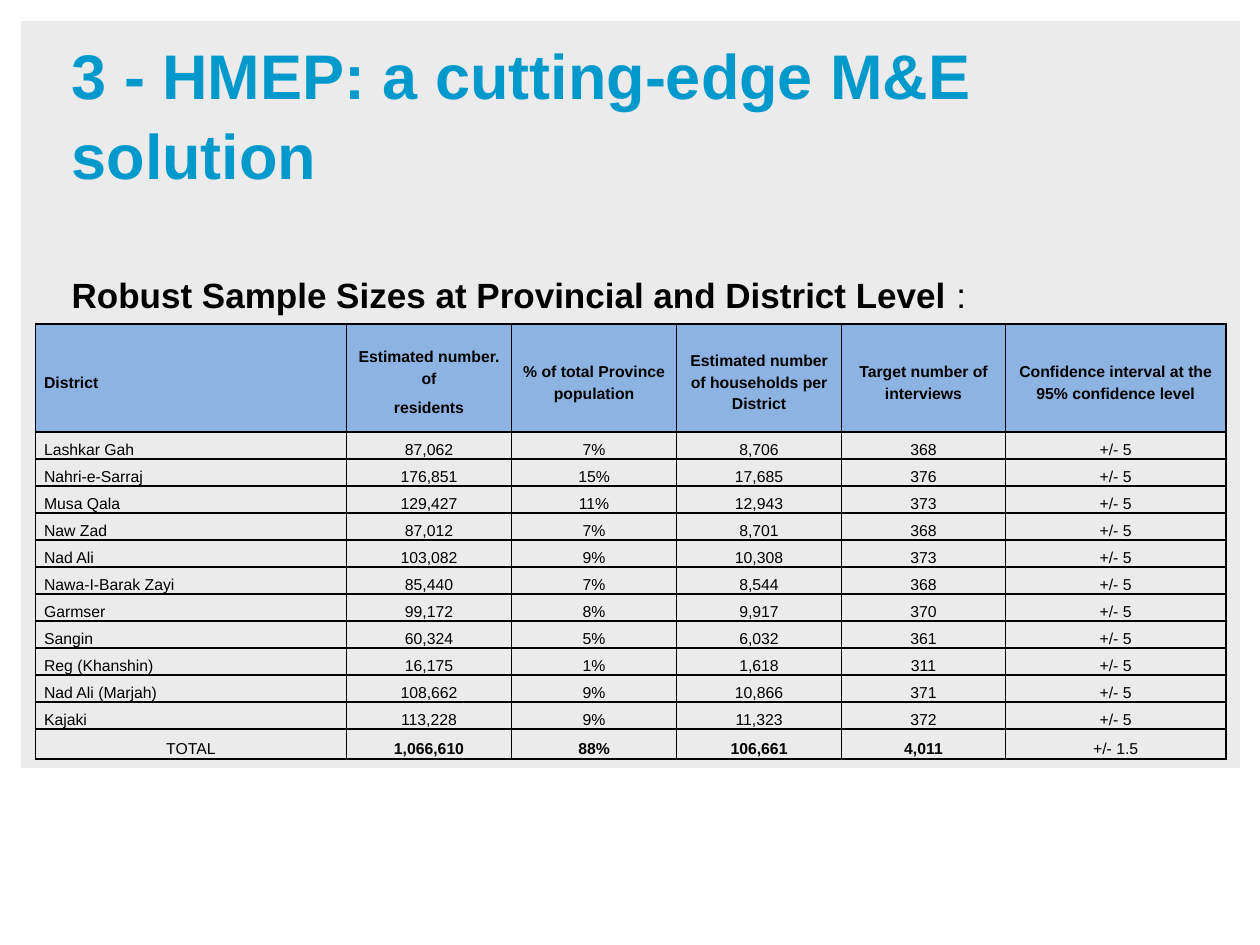
import pptx
import pptx.dml.color
import pptx.enum.shapes
import pptx.enum.text
import pptx.oxml
import pptx.oxml.ns
import pptx.util

Inches = pptx.util.Inches
Pt = pptx.util.Pt
Align = pptx.enum.text.PP_ALIGN
Anchor = pptx.enum.text.MSO_ANCHOR

COLORS = {"panel": "EBEBEB", "title": "0099CC", "text": "000000",
          "header": "8DB3E2", "border": "000000"}

HEADERS = ["District", "Estimated number. of\nresidents",
           "% of total Province population",
           "Estimated number of households per District",
           "Target number of interviews",
           "Confidence interval at the 95% confidence level"]
DISTRICTS = [
    ("Lashkar Gah", "87,062", "7%", "8,706", "368"),
    ("Nahri-e-Sarraj", "176,851", "15%", "17,685", "376"),
    ("Musa Qala", "129,427", "11%", "12,943", "373"),
    ("Naw Zad", "87,012", "7%", "8,701", "368"),
    ("Nad Ali", "103,082", "9%", "10,308", "373"),
    ("Nawa-I-Barak Zayi", "85,440", "7%", "8,544", "368"),
    ("Garmser", "99,172", "8%", "9,917", "370"),
    ("Sangin", "60,324", "5%", "6,032", "361"),
    ("Reg (Khanshin)", "16,175", "1%", "1,618", "311"),
    ("Nad Ali (Marjah)", "108,662", "9%", "10,866", "371"),
    ("Kajaki", "113,228", "9%", "11,323", "372"),
]
TOTAL = ("TOTAL", "1,066,610", "88%", "106,661", "4,011", "+/- 1.5")


class SlideBuilder:
    font = "Arial"
    cell_size = 9
    border_width = 1

    def __init__(self, slide):
        self.slide = slide

    def color(self, name):
        return pptx.dml.color.RGBColor.from_string(COLORS[name])

    def run(self, paragraph, text, size, bold=False, color="text"):
        run = paragraph.add_run()
        run.text = text
        run.font.name = self.font
        run.font.size = Pt(size)
        run.font.bold = bold
        run.font.color.rgb = self.color(color)

    def panel(self, left, top, width, height):
        panel = self.slide.shapes.add_shape(
            pptx.enum.shapes.MSO_SHAPE.RECTANGLE,
            Inches(left), Inches(top), Inches(width), Inches(height))
        panel.shadow.inherit = False
        panel.fill.solid()
        panel.fill.fore_color.rgb = self.color("panel")
        panel.line.color.rgb = self.color("panel")
        panel.line.width = Pt(0.75)

    def text(self, left, top, width, height, runs, size, color="text",
             anchor=Anchor.TOP, spacing=1.0, margin_top=0.05):
        frame = self.slide.shapes.add_textbox(
            Inches(left), Inches(top), Inches(width), Inches(height)).text_frame
        frame.word_wrap = True
        frame.vertical_anchor = anchor
        frame.margin_top = Inches(margin_top)
        paragraph = frame.paragraphs[0]
        paragraph.line_spacing = spacing
        for words, bold in runs:
            self.run(paragraph, words, size, bold, color)

    def cell(self, cell, text, bold, centered, fill=None):
        cell.margin_left = cell.margin_right = Inches(0.07)
        cell.margin_top, cell.margin_bottom = Inches(0.04), 0
        cell.vertical_anchor = Anchor.MIDDLE
        for index, line in enumerate(text.split("\n")):
            frame = cell.text_frame
            paragraph = frame.add_paragraph() if index else frame.paragraphs[0]
            paragraph.alignment = Align.CENTER if centered else Align.LEFT
            paragraph.line_spacing = Pt(12.5)
            if index:
                paragraph.space_before = Pt(3.9)
            self.run(paragraph, line, self.cell_size, bold)
        # Borders come before the fill in the cell properties
        properties = cell._tc.get_or_add_tcPr()
        for side in ("lnL", "lnR", "lnT", "lnB"):
            properties.append(pptx.oxml.parse_xml(
                f'<a:{side} {pptx.oxml.ns.nsdecls("a")} w="{Pt(self.border_width)}">'
                f'<a:solidFill><a:srgbClr val="{COLORS["border"]}"/></a:solidFill>'
                f'</a:{side}>'))
        if fill:
            cell.fill.solid()
            cell.fill.fore_color.rgb = self.color(fill)
        else:
            cell.fill.background()

    def table(self, left, top, widths, heights, rows):
        table = self.slide.shapes.add_table(
            len(rows), len(widths), Inches(left), Inches(top),
            Inches(sum(widths)), Inches(sum(heights))).table
        table.first_row = table.horz_banding = False
        for column, width in zip(table.columns, widths):
            column.width = Inches(width)
        last_row, last_column = len(rows) - 1, len(widths) - 1
        for r, values in enumerate(rows):
            table.rows[r].height = Inches(heights[r])
            for c, value in enumerate(values):
                is_sum = r == last_row and 0 < c < last_column
                self.cell(table.cell(r, c), value, bold=r == 0 or is_sum,
                          centered=c > 0 or r == last_row,
                          fill=None if r else "header")


def main():
    deck = pptx.Presentation()
    deck.slide_width, deck.slide_height = Inches(10), Inches(7.5)
    builder = SlideBuilder(deck.slides.add_slide(deck.slide_layouts[6]))

    # Background panel
    builder.panel(0.17, 0.17, 9.67, 5.92)

    # Title and subtitle
    builder.text(0.47, 0.49, 9, 1.08,
                 [("3 - HMEP: a cutting-edge M&E solution", True)],
                 36, "title", Anchor.BOTTOM, spacing=1.05)
    builder.text(0.47, 2.09, 9, 3.79,
                 [("Robust Sample Sizes at Provincial and District Level ", True),
                  (":", False)], 20, margin_top=0.08)

    # Sample size table: the district rows share the remaining height
    header_height, total_height, table_height = 0.86, 0.24, 3.46
    district_height = (table_height - header_height - total_height) / len(DISTRICTS)
    heights = [header_height] + [district_height] * len(DISTRICTS) + [total_height]
    rows = [HEADERS] + [row + ("+/- 5",) for row in DISTRICTS] + [TOTAL]
    builder.table(0.28, 2.57, [2.47, 1.31, 1.31, 1.31, 1.3, 1.75], heights, rows)

    deck.save("out.pptx")


if __name__ == "__main__":
    main()
